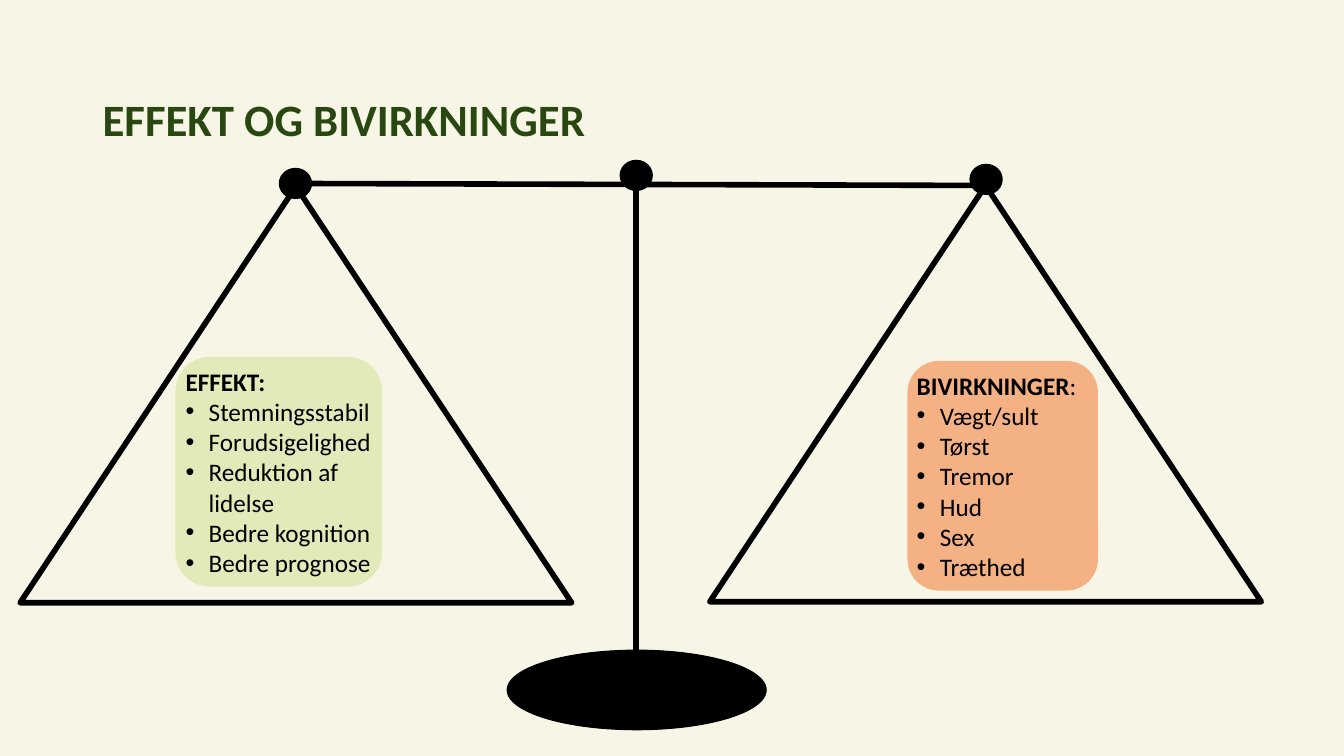
from lxml import etree
from pptx import Presentation
from pptx import util as u
from pptx.dml.color import RGBColor
from pptx.enum import shapes, text
from pptx.oxml.ns import qn

COLORS = {
    "background": "F7F6E6",
    "title": "294711",
    "black": "000000",
    "effect": "E3E9B8",
    "side_effect": "F4B183",
}
FONT = "Calibri"
KINDS = shapes.MSO_SHAPE


def rgb(name):
    return RGBColor.from_string(COLORS[name])


def add_run(p, content, size=18, color="black", bold=False):
    r = p.add_run()
    r.text = content
    r.font.name = FONT
    r.font.size = u.Pt(size)
    r.font.bold = bold
    r.font.color.rgb = rgb(color)
    return r


def add_bullet(p, indent=0.23):
    pPr = p._p.get_or_add_pPr()
    pPr.set("marL", str(u.Inches(indent)))
    pPr.set("indent", str(-u.Inches(indent)))
    etree.SubElement(pPr, qn("a:buFont")).set("typeface", "Arial")
    etree.SubElement(pPr, qn("a:buChar")).set("char", "•")


def add_shape(s, kind, box, fill=None, line=None):
    sp = s.shapes.add_shape(kind, *map(u.Inches, box))
    sp.shadow.inherit = False
    if fill:
        sp.fill.solid()
        sp.fill.fore_color.rgb = rgb(fill)
    else:
        sp.fill.background()
    if line:
        sp.line.color.rgb = rgb("black")
        sp.line.width = u.Pt(line)
        etree.SubElement(sp.line._get_or_add_ln(), qn("a:round"))
    else:
        sp.line.fill.background()
    return sp


def add_bar(s, x1, y1, x2, y2):
    bar = s.shapes.add_connector(
        shapes.MSO_CONNECTOR.STRAIGHT, *map(u.Inches, (x1, y1, x2, y2)))
    bar.line.color.rgb = rgb("black")
    bar.line.width = u.Pt(4)
    etree.SubElement(bar._element.spPr, qn("a:effectLst"))


def draw_title(s, box, title):
    tf = s.shapes.add_textbox(*map(u.Inches, box)).text_frame
    tf.word_wrap = True
    tf.vertical_anchor = text.MSO_ANCHOR.MIDDLE
    p = tf.paragraphs[0]
    p.line_spacing = 0.9
    add_run(p, title, size=32, color="title", bold=True)


def draw_scale(s, box):
    x, y, w, h = box
    add_shape(s, KINDS.OVAL, (x + 4.83, y + h - 0.79, 2.57, 0.79), "black", 0.75)
    add_bar(s, x + 2.57, y + 0.23, x + 9.58, y + 0.25)
    add_bar(s, x + 6.11, y + 0.09, x + 6.11, y + 5.11)
    for left, top in ((0, 0.26), (w - 5.47, 0.25)):
        add_shape(s, KINDS.ISOSCELES_TRIANGLE, (x + left, y + top, 5.47, 4.13), line=4)
    for left, top in ((2.57, 0.08), (5.95, 0), (9.42, 0.04)):
        add_shape(s, KINDS.OVAL, (x + left, y + top, 0.32, 0.3), "black", 0.75)


def draw_weight(s, box, fill, heading, items):
    tf = add_shape(s, KINDS.ROUNDED_RECTANGLE, box, fill).text_frame
    tf.word_wrap = True
    tf.vertical_anchor = text.MSO_ANCHOR.MIDDLE
    tf.margin_left = tf.margin_right = tf.margin_top = tf.margin_bottom = 0
    p = tf.paragraphs[0]
    p.alignment = text.PP_ALIGN.LEFT
    for content, bold in heading:
        add_run(p, content, bold=bold)
    for item in items:
        p = tf.add_paragraph()
        p.alignment = text.PP_ALIGN.LEFT
        add_bullet(p)
        add_run(p, item)


def main():
    prs = Presentation()
    prs.slide_width, prs.slide_height = u.Inches(13.33), u.Inches(7.5)
    s = prs.slides.add_slide(prs.slide_layouts[6])
    s.background.fill.solid()
    s.background.fill.fore_color.rgb = rgb("background")

    draw_title(s, (0.92, 0.79, 11.5, 0.84), "EFFEKT OG BIVIRKNINGER")
    draw_scale(s, (0.2, 1.59, 12.31, 5.65))
    draw_weight(s, (9, 3.58, 1.89, 2.28), "side_effect",
                [("BIVIRKNINGER", True), (":", False)],
                ["Vægt/sult", "Tørst", "Tremor", "Hud", "Sex", "Træthed"])
    draw_weight(s, (1.74, 3.54, 2.05, 2.28), "effect",
                [("EFFEKT:", True)],
                ["Stemningsstabil", "Forudsigelighed", "Reduktion af lidelse",
                 "Bedre kognition", "Bedre prognose"])
    prs.save("out.pptx")


if __name__ == "__main__":
    main()
